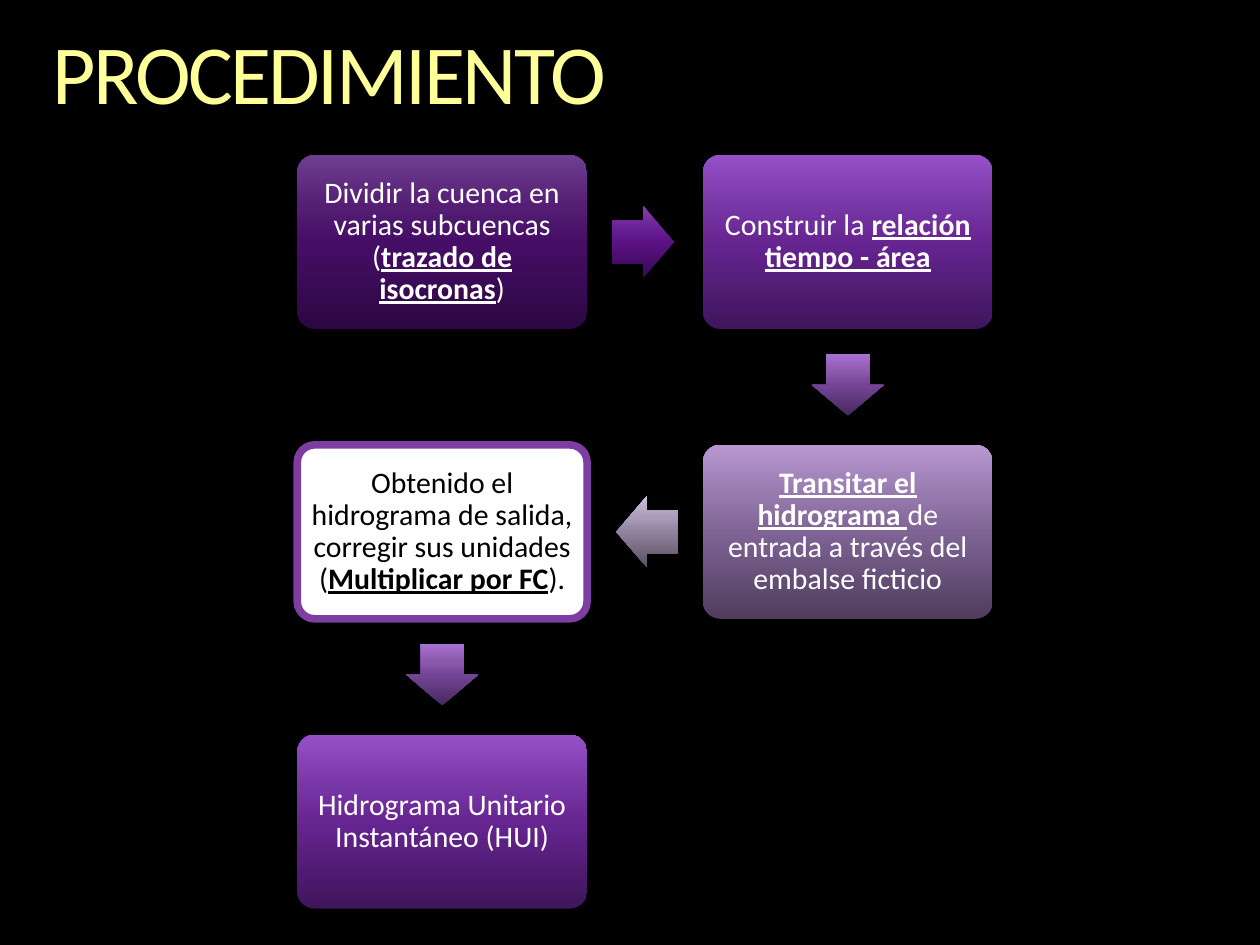
from dataclasses import dataclass
from typing import Any, Optional

from lxml import etree
from pptx import Presentation
from pptx import util as u
from pptx.dml.color import RGBColor
from pptx.enum import shapes, text
from pptx.oxml import ns

Stops = tuple[tuple[int, str], ...]


def shades(*colors: str) -> Stops:
    """Pair four colours, dark to light, with the stops every panel uses."""
    return tuple(zip((0, 50, 70, 100), colors))


@dataclass(frozen=True)
class Theme:
    font: str = "Calibri"
    title_size: float = 48
    step_size: float = 17
    background: str = "000000"
    light: str = "FFFFFF"
    dark: str = "000000"
    border: str = "7D3DA1"
    border_width: float = 4.33
    title: Stops = ((0, "FFFFB9"), (36, "FFFF99"), (86, "F6AE1E"))
    indigo: Stops = shades("2C0741", "460E66", "531E74", "6E3E90")
    violet: Stops = shades("3F155C", "662591", "7736A5", "9550C8")
    mauve: Stops = shades("4F3D5D", "7F6495", "9579AD", "B897D2")
    arrow_indigo: Stops = shades("390954", "5B1284", "6A2195", "863FB5")
    arrow_violet: Stops = shades("48295E", "744596", "8957AC", "A972D1")
    arrow_mauve: Stops = shades("5A5062", "91829E", "AA9BB8", "CFBDDF")


THEME = Theme()

# Step grid, in points
LEFT, TOP = 169.9, 88.6
STEP_W, STEP_H = 165.6, 99.4
COLUMN_PITCH, ROW_PITCH = 231.8, 165.6
ARROW_LENGTH, ARROW_BREADTH = 35.1, 41
ARROW_SETBACK = 1.1


@dataclass(frozen=True)
class Run:
    wording: str
    strong: bool = False


@dataclass(frozen=True)
class Step:
    column: int
    row: int
    runs: tuple[Run, ...]
    fill: Optional[Stops] = None  # None: white panel with a border
    arrow: Optional[Stops] = None  # arrow leading to the next step

    @property
    def center(self) -> tuple[float, float]:
        return (LEFT + self.column * COLUMN_PITCH + STEP_W / 2,
                TOP + self.row * ROW_PITCH + STEP_H / 2)


STEPS = (
    Step(0, 0, (Run("Dividir la cuenca en varias subcuencas ("),
                Run("trazado de isocronas", True), Run(")")),
         THEME.indigo, THEME.arrow_indigo),
    Step(1, 0, (Run("Construir la "), Run("relación tiempo - área", True)),
         THEME.violet, THEME.arrow_violet),
    Step(1, 1, (Run("Transitar el hidrograma ", True),
                Run("de entrada a través del embalse ficticio")),
         THEME.mauve, THEME.arrow_mauve),
    Step(0, 1, (Run("Obtenido el hidrograma de salida, corregir sus unidades ("),
                Run("Multiplicar por FC", True), Run(").")),
         None, THEME.arrow_violet),
    Step(0, 2, (Run("Hidrograma Unitario Instantáneo (HUI)"),), THEME.violet),
)


def apply(target: Any, values: dict[str, Any]) -> None:
    for attribute, value in values.items():
        setattr(target, attribute, value)


def gradient(stops: Stops, angle: int) -> Any:
    """Build a linear gradient that stays upright when its shape is rotated."""
    fill = etree.Element(ns.qn("a:gradFill"), rotWithShape="0")
    stop_list = etree.SubElement(fill, ns.qn("a:gsLst"))
    for position, color in stops:
        stop = etree.SubElement(stop_list, ns.qn("a:gs"), pos=str(position * 1000))
        etree.SubElement(stop, ns.qn("a:srgbClr"), val=color)
    etree.SubElement(fill, ns.qn("a:lin"), ang=str(angle * 60000), scaled="0")
    return fill


def set_frame(frame: Any, margin: float, anchor: Any) -> None:
    sides = ("left", "top", "right", "bottom")
    apply(frame, {"word_wrap": True, "vertical_anchor": anchor}
          | {f"margin_{side}": u.Pt(margin) for side in sides})


def add_panel(slide: Any, preset: Any, center: tuple[float, float],
              width: float, height: float, fill: Optional[Stops]) -> Any:
    x, y = center
    panel = slide.shapes.add_shape(preset, u.Pt(x - width / 2), u.Pt(y - height / 2),
                                   u.Pt(width), u.Pt(height))
    panel.shadow.inherit = False
    if fill:
        panel.line.fill.background()
        geometry = panel._element.spPr.find(ns.qn("a:prstGeom"))
        geometry.addnext(gradient(fill, 270))
    else:
        panel.fill.solid()
        panel.fill.fore_color.rgb = RGBColor.from_string(THEME.light)
        panel.line.color.rgb = RGBColor.from_string(THEME.border)
        panel.line.width = u.Pt(THEME.border_width)
    return panel


def add_step(slide: Any, step: Step) -> None:
    panel = add_panel(slide, shapes.MSO_SHAPE.ROUNDED_RECTANGLE, step.center,
                      STEP_W, STEP_H, step.fill)
    panel.adjustments[0] = 0.1
    set_frame(panel.text_frame, 5, text.MSO_ANCHOR.MIDDLE)
    sentence = panel.text_frame.paragraphs[0]
    apply(sentence, {"alignment": text.PP_ALIGN.CENTER, "line_spacing": 0.9})
    color = THEME.light if step.fill else THEME.dark
    for part in step.runs:
        run = sentence.add_run()
        run.text = part.wording
        apply(run.font, {"name": THEME.font, "size": u.Pt(THEME.step_size),
                         "bold": part.strong, "underline": part.strong})
        run.font.color.rgb = RGBColor.from_string(color)


def add_arrow(slide: Any, origin: Step, target: Step) -> None:
    """Point from one step to the next, set slightly back towards the origin."""
    across, down = target.column - origin.column, target.row - origin.row
    (x1, y1), (x2, y2) = origin.center, target.center
    center = ((x1 + x2) / 2 - across * ARROW_SETBACK,
              (y1 + y2) / 2 - down * ARROW_SETBACK)
    arrow = add_panel(slide, shapes.MSO_SHAPE.RIGHT_ARROW, center,
                      ARROW_LENGTH, ARROW_BREADTH, origin.arrow)
    arrow.adjustments[0] = 0.6
    arrow.adjustments[1] = 0.5
    arrow.rotation = {(1, 0): 0, (0, 1): 90, (-1, 0): 180}[across, down]


def add_title(slide: Any, wording: str) -> None:
    title = slide.shapes.add_textbox(u.Pt(30), u.Pt(18), u.Pt(660), u.Pt(52.6))
    set_frame(title.text_frame, 0, text.MSO_ANCHOR.TOP)
    heading = title.text_frame.paragraphs[0]
    heading.line_spacing = 0.9
    run = heading.add_run()
    run.text = wording
    apply(run.font, {"name": THEME.font, "size": u.Pt(THEME.title_size)})
    properties = run._r.get_or_add_rPr()
    properties.set("spc", "-150")
    properties.insert(0, gradient(THEME.title, 90))


def main() -> None:
    deck = Presentation()
    apply(deck, {"slide_width": u.Pt(720), "slide_height": u.Pt(540)})
    slide = deck.slides.add_slide(deck.slide_layouts[6])
    slide.background.fill.solid()
    slide.background.fill.fore_color.rgb = RGBColor.from_string(THEME.background)
    add_title(slide, "PROCEDIMIENTO")
    for step in STEPS:
        add_step(slide, step)
    for origin, target in zip(STEPS, STEPS[1:]):
        add_arrow(slide, origin, target)
    deck.save("out.pptx")


if __name__ == "__main__":
    main()
